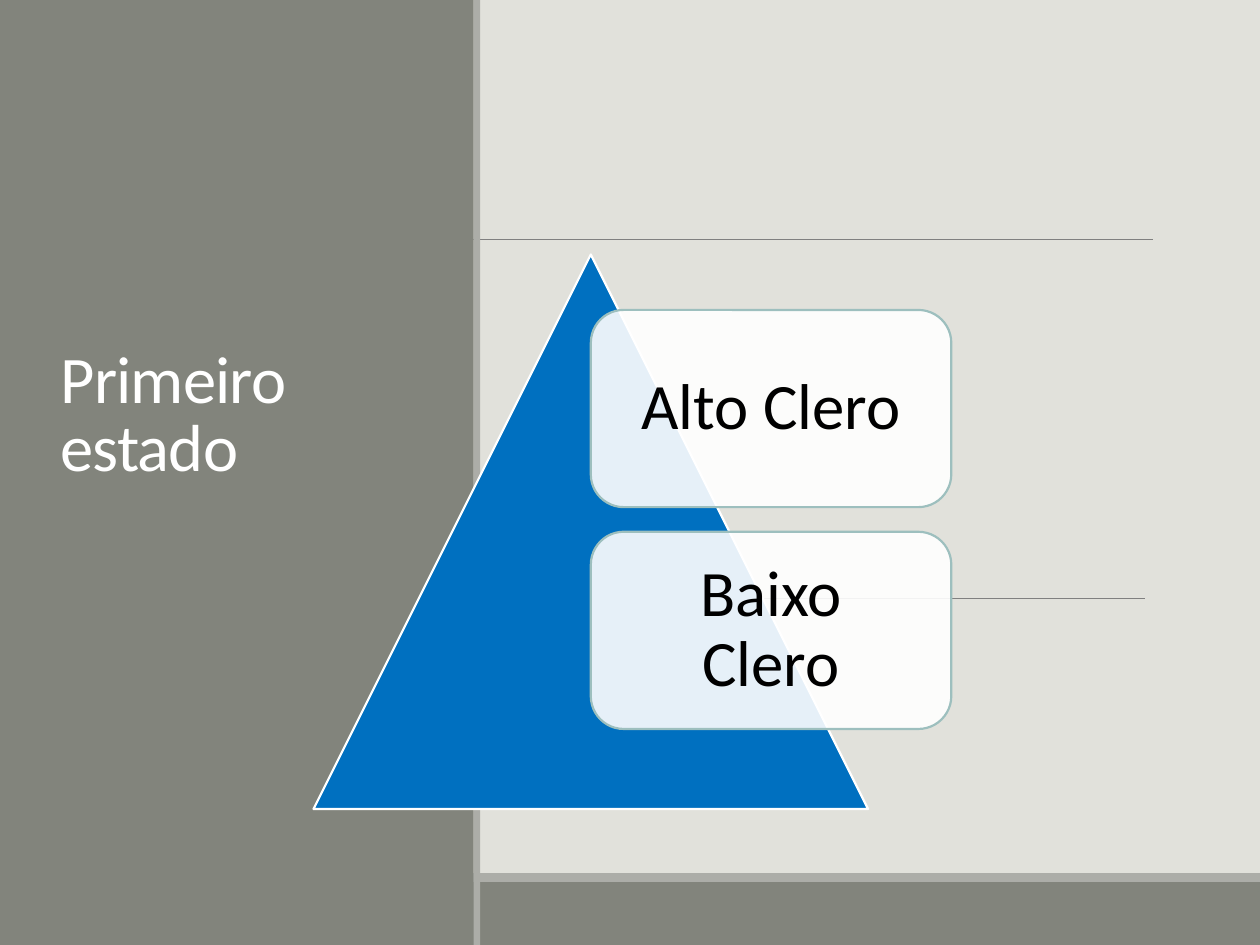
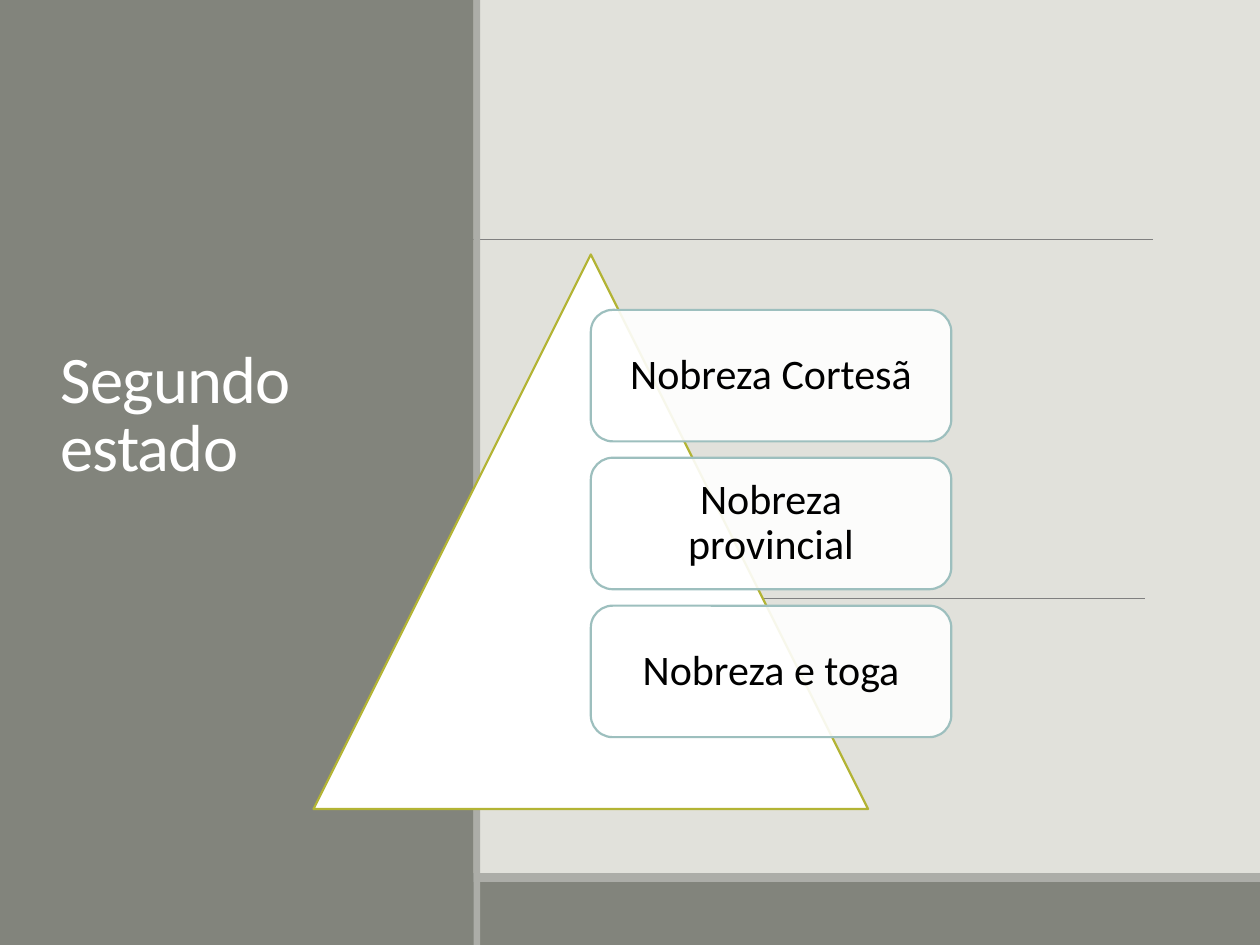
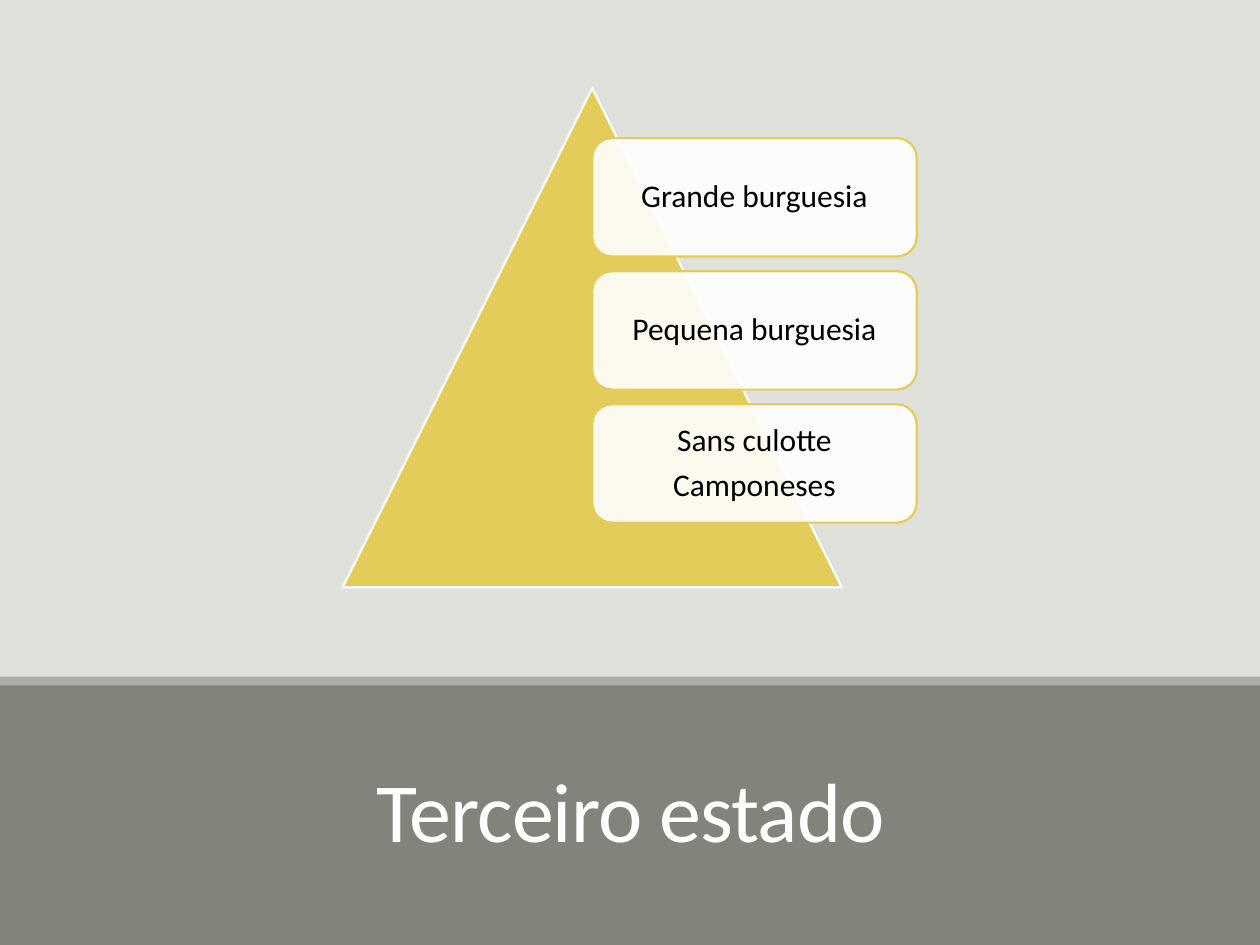
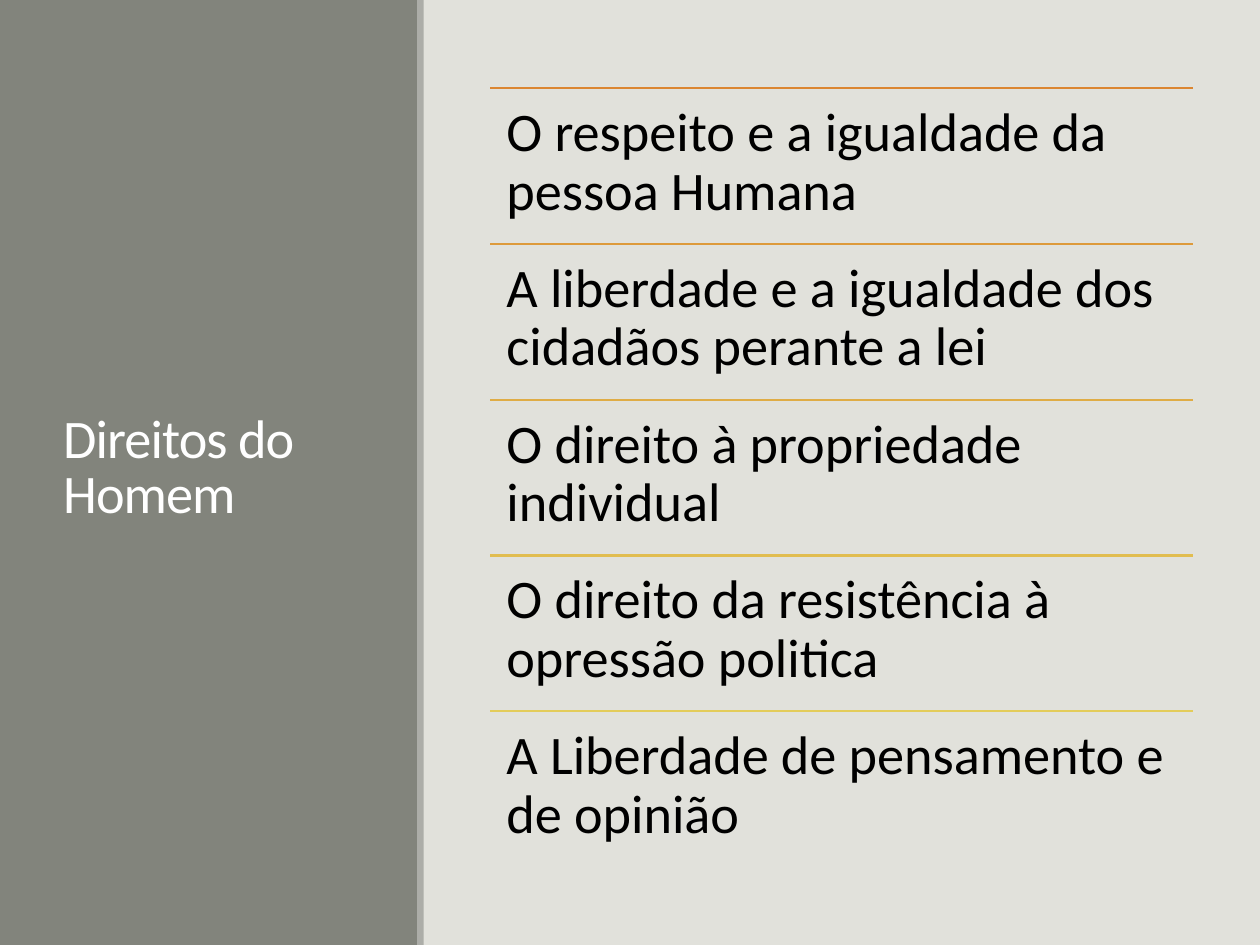
from lxml.etree import SubElement
from pptx import Presentation
from pptx.dml.color import RGBColor
from pptx.enum.shapes import MSO_CONNECTOR, MSO_SHAPE as Shape
from pptx.enum.text import MSO_ANCHOR as Anchor, MSO_AUTO_SIZE, PP_ALIGN as Align
from pptx.oxml.ns import qn
from pptx.util import Cm, Pt

WIDTH, HEIGHT = 25.4, 19.05
PAPER, PANEL, EDGE, RULE = "E1E1DB", "82847C", "ACADA8", "808080"
WHITE, BLACK = "FFFFFF", "000000"
BLUE, OLIVE, TEAL, GOLD = "0070C0", "B3B435", "9DBFBE", "E3CC5A"
FONT = "Calibri"
OUTLINE = 1.25
EDGE_WIDTH, EDGE_HEIGHT = 0.13, 0.18


def rgb(colour):
    return RGBColor.from_string(colour)


class Deck:
    def __init__(self):
        self.prs = Presentation()
        self.prs.slide_width, self.prs.slide_height = Cm(WIDTH), Cm(HEIGHT)
        background = self.prs.slide_master.background.fill
        background.solid()
        background.fore_color.rgb = rgb(PAPER)
        self.slide = None

    def new_slide(self):
        self.slide = self.prs.slides.add_slide(self.prs.slide_layouts[5])

    def fill_text(self, frame, lines, size, colour, align, anchor, spacing, inset=None):
        frame.word_wrap = True
        frame.auto_size = MSO_AUTO_SIZE.NONE
        frame.vertical_anchor = anchor
        if inset is not None:
            frame.margin_left = frame.margin_right = Cm(inset)
            frame.margin_top = frame.margin_bottom = Cm(inset)
        runs = []
        for number, line in enumerate(lines):
            paragraph = frame.add_paragraph() if number else frame.paragraphs[0]
            paragraph.alignment = align
            paragraph.line_spacing = spacing
            run = paragraph.add_run()
            run.text = line
            run.font.name = FONT
            run.font.size = Pt(size)
            run.font.color.rgb = rgb(colour)
            runs.append(run)
        for paragraph in frame.paragraphs[:-1]:
            paragraph.space_after = Pt(size * 0.35)
        return runs

    def title(self, text, box, size, align=Align.LEFT, anchor=Anchor.BOTTOM):
        heading = self.slide.shapes.title
        heading.left, heading.top, heading.width, heading.height = map(Cm, box)
        self.slide.shapes.element.append(heading.element)
        for run in self.fill_text(heading.text_frame, [text], size, WHITE, align, anchor, 0.85):
            run.font._element.set("spc", "-50")

    def shape(self, kind, box, fill, line=None, opacity=None):
        drawn = self.slide.shapes.add_shape(kind, *map(Cm, box))
        drawn.shadow.inherit = False
        drawn.fill.solid()
        drawn.fill.fore_color.rgb = rgb(fill)
        if opacity is not None:
            tint = drawn.element.spPr.find(qn("a:solidFill"))[0]
            SubElement(tint, qn("a:alpha"), val=str(opacity * 1000))
        if line:
            drawn.line.color.rgb = rgb(line)
            drawn.line.width = Pt(OUTLINE)
        else:
            drawn.line.fill.background()
        return drawn

    def band(self, *box, fill=PANEL):
        self.shape(Shape.RECTANGLE, box, fill)

    def rule(self, left, right, top, colour=RULE, weight=0.5):
        line = self.slide.shapes.add_connector(
            MSO_CONNECTOR.STRAIGHT, Cm(left), Cm(top), Cm(right), Cm(top))
        line.line.color.rgb = rgb(colour)
        line.line.width = Pt(weight)
        SubElement(line.element.spPr, qn("a:effectLst"))

    def text(self, line, box, size, inset):
        frame = self.slide.shapes.add_textbox(*map(Cm, box)).text_frame
        self.fill_text(frame, [line], size, BLACK, Align.LEFT, Anchor.TOP, 0.9, inset)

    def pyramid(self, left, top, side, fill, line, card_line, cards, size, inset):
        self.shape(Shape.ISOSCELES_TRIANGLE, (left, top, side, side), fill, line)
        height = side * 0.8 / (len(cards) * 1.125)
        for number, lines in enumerate(cards):
            card_top = top + side * 0.1 + number * height * 1.125
            box = (left + side / 2, card_top, side * 0.65, height)
            card = self.shape(Shape.ROUNDED_RECTANGLE, box, WHITE, card_line, opacity=90)
            self.fill_text(card.text_frame, lines, size, BLACK, Align.CENTER,
                           Anchor.MIDDLE, 0.9, inset)

    def side_panel_slide(self, title):
        panel_width = 9.55
        self.new_slide()
        self.rule(2.49, 23.24, 4.83)
        self.band(0, 17.78, WIDTH, 1.27)
        self.band(0, 17.6, WIDTH, EDGE_HEIGHT, fill=EDGE)
        self.rule(2.51, 23.09, 12.07)
        self.band(0, 0, panel_width, HEIGHT)
        self.title(title, (0.97, 1.78, 7.62, 8.13), 38)
        self.band(panel_width, 0, EDGE_WIDTH, HEIGHT, fill=EDGE)


def estates(deck):
    deck.side_panel_slide("Primeiro estado")
    deck.pyramid(6.32, 5.13, 11.18, BLUE, WHITE, TEAL,
                 [["Alto Clero"], ["Baixo Clero"]], 37, 0.58)

    deck.side_panel_slide("Segundo estado")
    deck.pyramid(6.32, 5.13, 11.18, WHITE, OLIVE, TEAL,
                 [["Nobreza Cortesã"], ["Nobreza provincial"], ["Nobreza e toga"]], 24, 0.39)

    deck.new_slide()
    deck.band(0, 13.77, WIDTH, HEIGHT - 13.77)
    deck.title("Terceiro estado", (2.24, 14.58, 20.96, 2.87), 48, Align.CENTER)
    deck.band(0, 13.64, WIDTH, EDGE_HEIGHT, fill=EDGE)
    deck.pyramid(6.91, 1.78, 10.06, GOLD, WHITE, GOLD,
                 [["Grande burguesia"], ["Pequena burguesia"], ["Sans culotte", "Camponeses"]],
                 18, 0.3)


def rights(deck):
    left, top, width, step = 9.88, 1.78, 14.16, 3.14
    articles = [
        ("O respeito e a igualdade da pessoa Humana", "DB8631"),
        ("A liberdade e a igualdade dos cidadãos perante a lei", "DD9A3B"),
        ("O direito à propriedade individual", "DFAC45"),
        ("O direito da resistência à opressão politica", "E1BD50"),
        ("A Liberdade de pensamento e de opinião", GOLD),
    ]
    deck.new_slide()
    deck.band(0, 0, 8.43, HEIGHT)
    deck.title("Direitos do Homem", (1.02, 1.45, 6.43, 16.03), 31, anchor=Anchor.MIDDLE)
    deck.band(8.41, 0, EDGE_WIDTH, HEIGHT, fill=EDGE)
    for number, (article, colour) in enumerate(articles):
        article_top = top + number * step
        deck.rule(left, left + width, article_top, colour, OUTLINE)
        deck.text(article, (left, article_top, width, step), 31, 0.33)


def main():
    deck = Deck()
    estates(deck)
    rights(deck)
    deck.prs.save("out.pptx")


if __name__ == "__main__":
    main()
